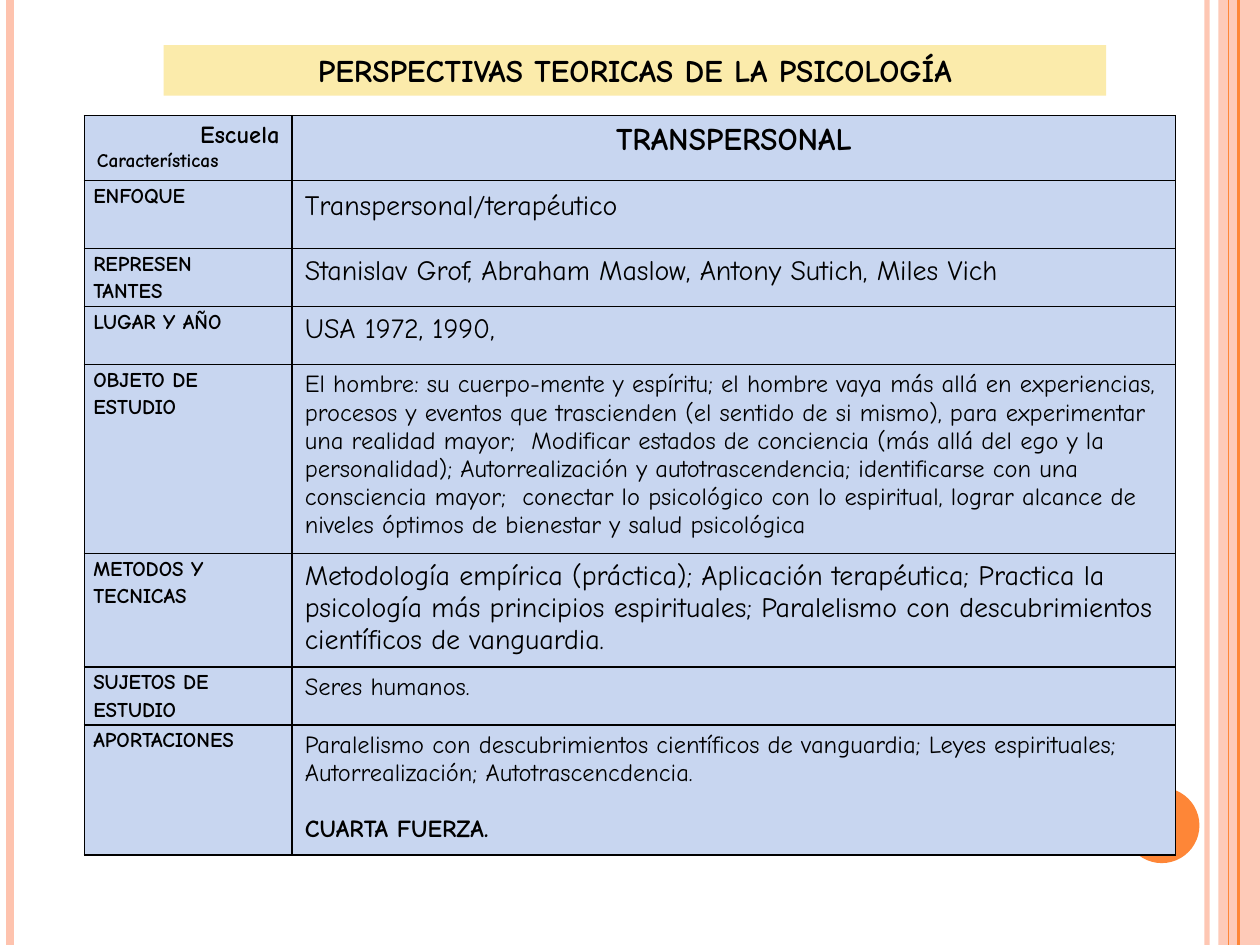
"""Build the slide on the transpersonal perspective in psychology."""
from pptx import Presentation
from pptx.dml.color import RGBColor
from pptx.enum.shapes import MSO_CONNECTOR, MSO_SHAPE
from pptx.enum.text import MSO_ANCHOR, PP_ALIGN
from pptx.oxml.ns import qn
from pptx.util import Cm, Pt
from lxml.etree import SubElement

STRAIGHT = MSO_CONNECTOR.STRAIGHT
RECTANGLE, OVAL = MSO_SHAPE.RECTANGLE, MSO_SHAPE.OVAL
LEFT, CENTER, RIGHT = PP_ALIGN.LEFT, PP_ALIGN.CENTER, PP_ALIGN.RIGHT
MIDDLE = MSO_ANCHOR.MIDDLE
BLACK = RGBColor(0x00, 0x00, 0x00)
ORANGE = RGBColor(0xFE, 0x86, 0x37)
PEACH = RGBColor(0xFE, 0xC3, 0xAE)
YELLOW = RGBColor(0xFB, 0xEB, 0xAB)
BLUE = RGBColor(0xC8, 0xD6, 0xF0)
FONT = "Comic Neue"
HEIGHT = 19.05


def add_text(paragraph, text, size, bold=False, align=LEFT):
    paragraph.alignment = align
    run = paragraph.add_run()
    run.text = text
    run.font.name = FONT
    run.font.size = Pt(size)
    run.font.bold = bold
    run.font.color.rgb = BLACK


def set_opacity(fill_parent, percent):
    color = next(fill_parent.iter(qn("a:srgbClr")))
    SubElement(color, qn("a:alpha"), val=str(percent * 1000))


presentation = Presentation()
presentation.slide_width = Cm(25.4)
presentation.slide_height = Cm(HEIGHT)
slide = presentation.slides.add_slide(presentation.slide_layouts[6])

stripes = [
    (24.33, PEACH, 3, 93),
    (0.2, PEACH, 4.5, 100),
    (24.97, ORANGE, 1.5, 100),
    (24.77, ORANGE, 0.75, 100),
]
blocks = [
    (RECTANGLE, 24.56, 0, 0.84, HEIGHT, PEACH),
    (OVAL, 22.66, 15.88, 1.52, 1.52, ORANGE),
    (RECTANGLE, 3.3, 0.91, 19, 1.02, YELLOW),
]
shapes = []
for kind, left, top, width, height, color in blocks:
    shape = slide.shapes.add_shape(kind, Cm(left), Cm(top), Cm(width), Cm(height))
    shape.shadow.inherit = False
    shape.fill.solid()
    shape.fill.fore_color.rgb = color
    shape.line.fill.background()
    shapes.append(shape)
side_band, circle, title = shapes
set_opacity(side_band.element.spPr, 87)

for left, color, width, opacity in stripes:
    stripe = slide.shapes.add_connector(STRAIGHT, Cm(left), Cm(0), Cm(left), Cm(HEIGHT))
    stripe.line.color.rgb = color
    stripe.line.width = Pt(width)
    if opacity < 100:
        set_opacity(stripe.element.spPr, opacity)
    SubElement(stripe.element.spPr, qn("a:effectLst"))

title.text_frame.word_wrap = True
title.text_frame.vertical_anchor = MIDDLE
add_text(title.text_frame.paragraphs[0], "PERSPECTIVAS TEORICAS DE LA PSICOLOGÍA", 18, True, CENTER)

rows = [
    (1.37, ["ENFOQUE"], 16, "Transpersonal/terapéutico"),
    (1.17, ["REPRESEN", "TANTES"], 16, "Stanislav Grof, Abraham Maslow, Antony Sutich, Miles Vich"),
    (1.17, ["LUGAR Y AÑO"], 16, "USA 1972, 1990,"),
    (3.81, ["OBJETO DE ESTUDIO"], 14,
     "El hombre: su cuerpo-mente y espíritu; el hombre vaya más allá en experiencias, "
     "procesos y eventos que trascienden (el sentido de si mismo), para experimentar una "
     "realidad mayor;  Modificar estados de conciencia (más allá del ego y la personalidad); "
     "Autorrealización y autotrascendencia; identificarse con una consciencia mayor;  conectar "
     "lo psicológico con lo espiritual, lograr alcance de niveles óptimos de bienestar y salud "
     "psicológica"),
    (2.29, ["METODOS Y TECNICAS"], 16,
     "Metodología empírica (práctica); Aplicación terapéutica; Practica la psicología más "
     "principios espirituales; Paralelismo con descubrimientos científicos de vanguardia."),
    (1.17, ["SUJETOS DE ESTUDIO"], 14, "Seres humanos."),
    (2.62, ["APORTACIONES"], 14,
     "Paralelismo con descubrimientos científicos de vanguardia; Leyes espirituales; "
     "Autorrealización; Autotrascencdencia."),
]
header_height = 1.31
total_height = header_height + sum(row[0] for row in rows)
table = slide.shapes.add_table(
    len(rows) + 1, 2, Cm(1.7), Cm(2.33), Cm(22), Cm(total_height)
).table
table.first_row = False
table.horz_banding = False
table.columns[0].width = Cm(4.19)
table.columns[1].width = Cm(17.81)
table.rows[0].height = Cm(header_height)

for cell in table.iter_cells():
    properties = cell._tc.get_or_add_tcPr()
    for side in ("lnL", "lnR", "lnT", "lnB"):
        border = SubElement(properties, qn(f"a:{side}"), w=str(Pt(1)))
        border_fill = SubElement(border, qn("a:solidFill"))
        SubElement(border_fill, qn("a:srgbClr"), val=str(BLACK))
    cell.fill.solid()
    cell.fill.fore_color.rgb = BLUE

corner = table.cell(0, 0).text_frame
add_text(corner.paragraphs[0], "Escuela", 14, True, RIGHT)
add_text(corner.add_paragraph(), "Características", 11, True)
add_text(table.cell(0, 1).text_frame.paragraphs[0], "TRANSPERSONAL", 18, True, CENTER)

for index, (height, labels, size, description) in enumerate(rows, start=1):
    table.rows[index].height = Cm(height)
    label_cell = table.cell(index, 0)
    label_cell.margin_left = label_cell.margin_right = Cm(0.18)
    label_cell.margin_top = label_cell.margin_bottom = Cm(0)
    for position, label in enumerate(labels):
        frame = label_cell.text_frame
        paragraph = frame.add_paragraph() if position else frame.paragraphs[0]
        paragraph.line_spacing = 1.15
        add_text(paragraph, label, 12, True)
    add_text(table.cell(index, 1).text_frame.paragraphs[0], description, size)

add_text(table.cell(1, 1).text_frame.paragraphs[0], " ", 18)
closing = table.cell(len(rows), 1).text_frame.add_paragraph()
closing.space_before = Pt(16)
add_text(closing, "CUARTA FUERZA.", 14, True)

presentation.save("out.pptx")
